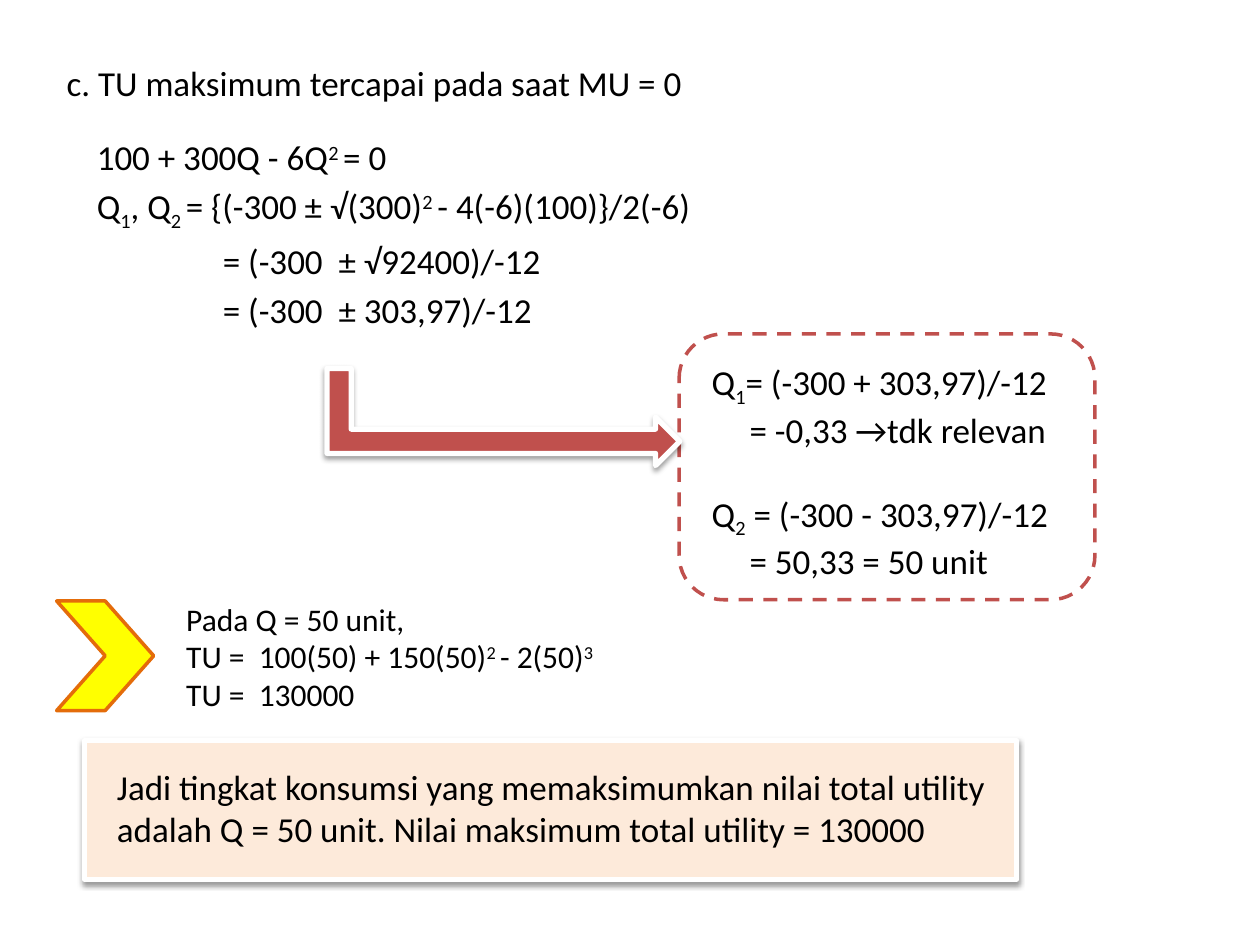
from lxml.etree import SubElement
from pptx import Presentation
from pptx.dml.color import RGBColor
from pptx.enum.dml import MSO_LINE
from pptx.enum.shapes import MSO_SHAPE as Preset
from pptx.enum.text import MSO_AUTO_SIZE as AutoSize
from pptx.oxml.ns import qn
from pptx.util import Inches, Pt

COLORS = {"text": "000000", "white": "FFFFFF", "red": "C0504D",
          "peach": "FDEADA", "yellow": "FFFF00", "orange": "E46C0A"}
FONT = "Calibri"

# "|" separates runs; a run starting with ^ is raised, with _ lowered.
BASELINES = {"^": 30000, "_": -25000}

HEADING = ["c. TU maksimum tercapai pada saat MU = 0"]
EQUATION = [
    "100 + 300Q - 6Q|^2 |= 0",
    "Q|_1|, Q|_2 |= {(-300 ± √(300)|^2 |- 4(-6)(100)}/2(-6)",
    "\t= (-300  ± √92400)/-12",
    "\t= (-300  ± 303,97)/-12",
]
ROOTS = [
    "Q|_1|= (-300 + 303,97)/-12",
    "\t= -0,33 →tdk relevan",
    "Q|_2| = (-300 - 303,97)/-12",
    "\t= 50,33 = 50 unit",
]
TOTAL_UTILITY = [
    "Pada Q = 50 unit,",
    "TU =  100(50) + 150(50)|^2 |- 2(50)|^3",
    "TU =  130000",
]
CONCLUSION = ["Jadi tingkat konsumsi yang memaksimumkan nilai total utility "
              "adalah Q = 50 unit. Nilai maksimum total utility = 130000"]


def rgb(name):
    return RGBColor.from_string(COLORS[name])


def add_shadow(shape):
    """Give the shape a soft shadow straight below it."""
    effects = shape._element.spPr.find(qn("a:effectLst"))
    shadow = SubElement(effects, qn("a:outerShdw"), blurRad=str(Pt(3.1)),
                        dist=str(Pt(1.6)), dir="5400000", rotWithShape="0")
    black = SubElement(shadow, qn("a:srgbClr"), val="000000")
    SubElement(black, qn("a:alpha"), val="38000")


def add_figure(slide, preset, box, fill, line, width=2, shadow=False):
    figure = slide.shapes.add_shape(preset, *map(Inches, box))
    figure.shadow.inherit = False
    figure.fill.solid()
    figure.fill.fore_color.rgb = rgb(fill)
    figure.line.color.rgb = rgb(line)
    figure.line.width = Pt(width)
    if shadow:
        add_shadow(figure)
    return figure


def add_runs(paragraph, marked_text):
    for part in marked_text.split("|"):
        baseline = BASELINES.get(part[0])
        run = paragraph.add_run()
        run.text = part[1:] if baseline else part
        if baseline:
            run._r.get_or_add_rPr().set("baseline", str(baseline))


def add_text(slide, box, lines, size=20, before=0, tab=None, wrap=True,
             gaps=None):
    """Write the lines; gaps maps a line index to its own space before."""
    textbox = slide.shapes.add_textbox(*map(Inches, box))
    frame = textbox.text_frame
    frame.word_wrap = wrap
    frame.auto_size = AutoSize.NONE
    for index, line in enumerate(lines):
        paragraph = frame.paragraphs[0] if index == 0 else frame.add_paragraph()
        paragraph.space_before = Pt((gaps or {}).get(index, before))
        if line.startswith("\t"):
            tabs = SubElement(paragraph._p.get_or_add_pPr(), qn("a:tabLst"))
            SubElement(tabs, qn("a:tab"), pos=str(Inches(tab)), algn="l")
        paragraph.font.name = FONT
        paragraph.font.size = Pt(size)
        paragraph.font.color.rgb = rgb("text")
        add_runs(paragraph, line)


def main():
    prs = Presentation()
    prs.slide_width, prs.slide_height = Inches(10), Inches(7.5)
    slide = prs.slides.add_slide(prs.slide_layouts[6])

    add_figure(slide, Preset.RECTANGLE, (0.67, 5.88, 7.4, 1.1),
               "peach", "white", width=3, shadow=True)
    roots_frame = add_figure(slide, Preset.ROUNDED_RECTANGLE,
                             (5.39, 2.65, 3.3, 2.11), "white", "red")
    roots_frame.line.dash_style = MSO_LINE.DASH

    add_text(slide, (0.83, 6.03, 7.17, 0.94), CONCLUSION, before=4)
    add_text(slide, (0.67, 1.03, 5, 1.9), EQUATION, before=4, tab=1)
    add_text(slide, (0.43, 0.44, 5.13, 0.44), HEADING, wrap=False)
    add_text(slide, (5.55, 2.81, 3.09, 1.78), ROOTS, tab=0.3, gaps={2: 24})

    arrow = add_figure(slide, Preset.BENT_UP_ARROW, (3.61, 1.91, 0.77, 2.8),
                       "red", "white", width=3, shadow=True)
    arrow.rotation = 90

    add_text(slide, (1.38, 4.71, 3.54, 1.01), TOTAL_UTILITY, size=18)
    add_figure(slide, Preset.CHEVRON, (0.45, 4.77, 0.77, 0.87),
               "yellow", "orange")

    prs.save("out.pptx")


if __name__ == "__main__":
    main()
